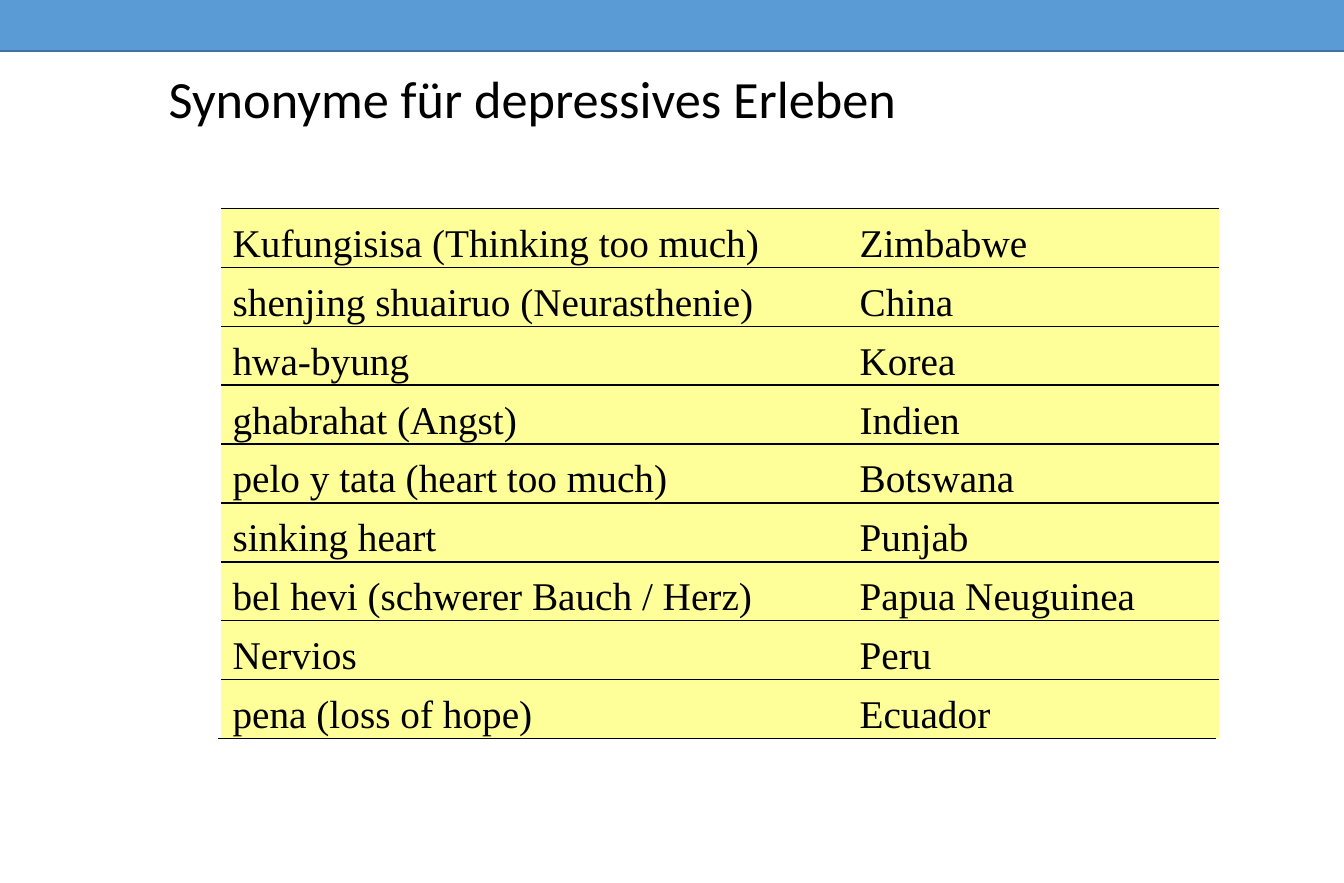
from lxml import etree
from pptx import Presentation
from pptx.dml.color import RGBColor
from pptx.enum.shapes import MSO_CONNECTOR, MSO_SHAPE
from pptx.enum.text import MSO_ANCHOR, PP_ALIGN
from pptx.oxml.ns import qn
from pptx.util import Cm, Pt

RECTANGLE = MSO_SHAPE.RECTANGLE
STRAIGHT = MSO_CONNECTOR.STRAIGHT
TOP, MIDDLE = MSO_ANCHOR.TOP, MSO_ANCHOR.MIDDLE
LEFT = PP_ALIGN.LEFT

BLUE = RGBColor(0x5B, 0x9B, 0xD5)
DARK_BLUE = RGBColor(0x43, 0x73, 0x9E)
YELLOW = RGBColor(0xFF, 0xFF, 0x99)
BLACK = RGBColor(0, 0, 0)

SYNONYMS = [
    ("Kufungisisa (Thinking too much)", "Zimbabwe"),
    ("shenjing shuairuo (Neurasthenie)", "China"),
    ("hwa-byung", "Korea"),
    ("ghabrahat (Angst)", "Indien"),
    ("pelo y tata (heart too much)", "Botswana"),
    ("sinking heart", "Punjab"),
    ("bel hevi (schwerer Bauch / Herz)", "Papua Neuguinea"),
    ("Nervios", "Peru"),
    ("pena (loss of hope)", "Ecuador"),
]
COLUMNS = [(Cm(4.77), Cm(13.53)), (Cm(18.3), Cm(8))]  # left, width
GRID_LEFT, GRID_TOP, GRID_WIDTH = Cm(4.77), Cm(4.5), Cm(21.53)
ROW_HEIGHT = Cm(1.27)
BAND_HEIGHT = Cm(1.1)
TITLE_FONT = {"name": "Calibri", "size": Pt(32)}
CELL_FONT = {"name": "Times New Roman", "size": Pt(24)}
CELL_FRAME = {"word_wrap": True, "vertical_anchor": TOP,
              "margin_top": Cm(0.21), "margin_bottom": 0}

prs = Presentation()
prs.slide_width, prs.slide_height = Cm(29), Cm(19.05)
s = prs.slides.add_slide(prs.slide_layouts[6])


def add_block(x, y, width, height, color):
    sp = s.shapes.add_shape(RECTANGLE, x, y, width, height)
    sp.shadow.inherit = False
    sp.fill.solid()
    sp.fill.fore_color.rgb = color
    sp.line.fill.background()
    return sp.text_frame


def write(tf, text, font):
    p = tf.paragraphs[0]
    p.alignment = LEFT
    r = p.add_run()
    r.text = text
    for key, value in font.items():
        setattr(r.font, key, value)
    r.font.color.rgb = BLACK


# Header band
add_block(0, 0, prs.slide_width, BAND_HEIGHT, BLUE)

# Title
title = s.shapes.add_textbox(Cm(3.39), Cm(1.27), Cm(24.59), Cm(1.85))
tf = title.text_frame
tf.word_wrap = True
tf.vertical_anchor = MIDDLE
write(tf, "Synonyme für depressives Erleben", TITLE_FONT)
tf.paragraphs[0].line_spacing = 0.9

# Synonyms and the countries they come from
for i, texts in enumerate(SYNONYMS):
    for (x, width), text in zip(COLUMNS, texts):
        tf = add_block(x, GRID_TOP + i * ROW_HEIGHT, width, ROW_HEIGHT, YELLOW)
        for key, value in CELL_FRAME.items():
            setattr(tf, key, value)
        write(tf, text, CELL_FONT)

# Edge of the band and rules between the rows; the last rule sits slightly left
rules = [(0, BAND_HEIGHT, prs.slide_width, DARK_BLUE)]
for i in range(len(SYNONYMS) + 1):
    x = GRID_LEFT if i < len(SYNONYMS) else GRID_LEFT - Cm(0.07)
    rules.append((x, GRID_TOP + i * ROW_HEIGHT, GRID_WIDTH, BLACK))
for x, y, width, color in rules:
    rule = s.shapes.add_connector(STRAIGHT, x, y, x + width, y)
    rule.line.color.rgb = color
    rule.line.width = Pt(1)
    etree.SubElement(rule._element.spPr, qn("a:effectLst"))

prs.save("out.pptx")
